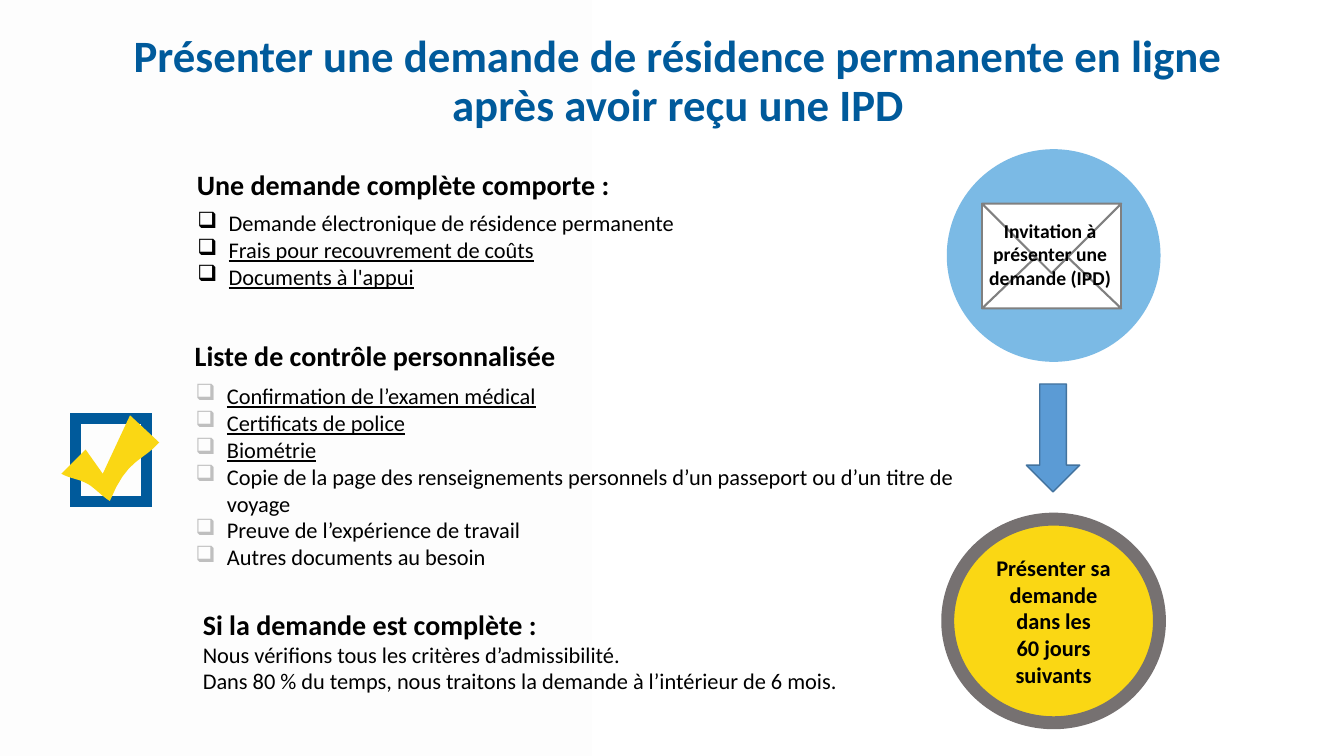
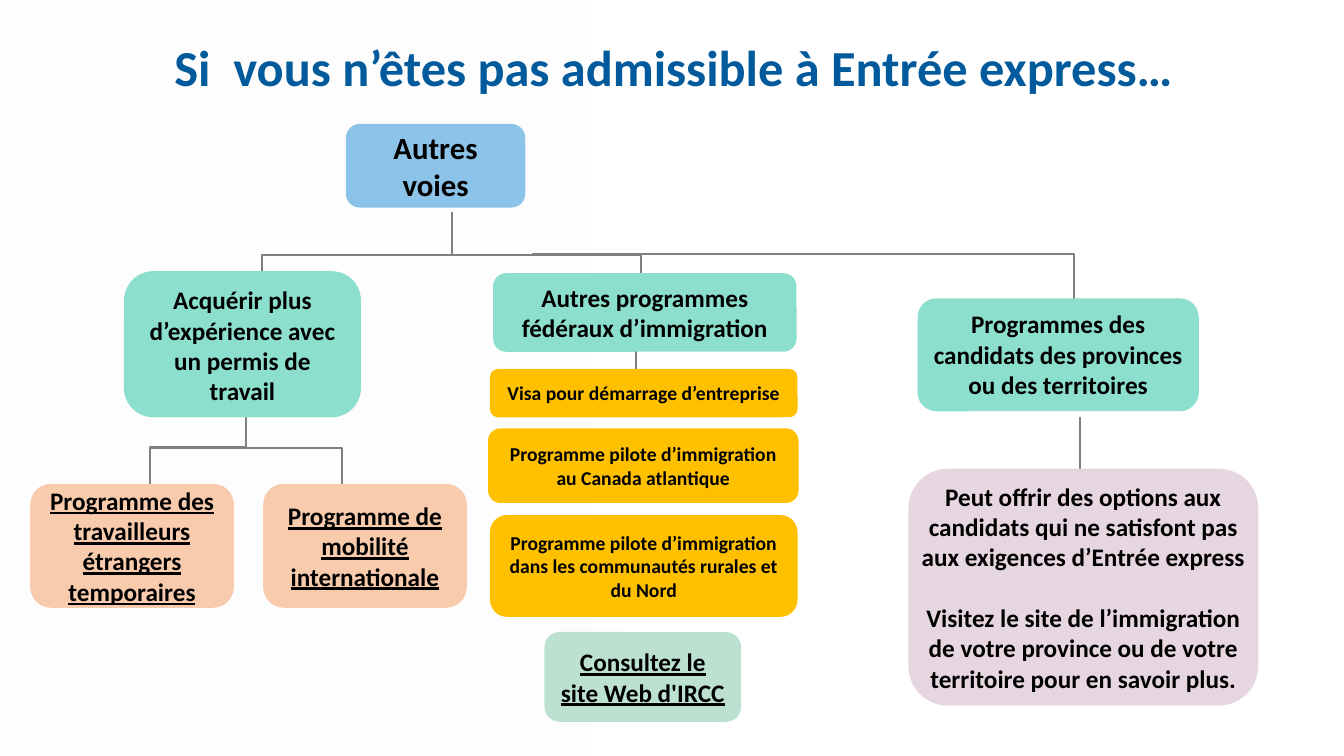
from lxml import etree
from pptx import Presentation
from pptx import util as u
from pptx.dml.color import RGBColor
from pptx.enum import shapes, text
from pptx.oxml.ns import qn

COLORS = {
    "band": "FDFDFD", "title": "005A9B", "ink": "000000", "white": "FFFFFF",
    "yellow": "FAD714", "ring": "767171", "sky": "7BBAE5", "rule": "808080",
    "arrow": "5B9BD5", "arrow_edge": "43739E", "bullet": "BFBFBF",
    "root": "8CC3E8", "branch": "8DDFCD", "permit": "F8CBAD",
    "pilot": "FFC000", "site": "BDE1D0", "province": "E6D6E0",
}
FONT = "Calibri"
NO_BREAK = chr(160)  # space that keeps a number with its unit
SHAPE = shapes.MSO_SHAPE
LEFT, CENTER = text.PP_ALIGN.LEFT, text.PP_ALIGN.CENTER
TOP, MIDDLE = text.MSO_ANCHOR.TOP, text.MSO_ANCHOR.MIDDLE
EVEN, NONE = (0.1, 0.1), (0, 0)


def rgb(name):
    return RGBColor.from_string(COLORS[name])


# Shared parts
def paint(shape, fill=None, line=None, weight=1.5):
    shape.shadow.inherit = False
    if fill:
        shape.fill.solid()
        shape.fill.fore_color.rgb = rgb(fill)
    else:
        shape.fill.background()
    if line:
        shape.line.color.rgb = rgb(line)
        shape.line.width = u.Pt(weight)
    else:
        shape.line.fill.background()
    return shape


def add_box(page, kind, area, fill=None, line=None, weight=1.5):
    shape = page.shapes.add_shape(kind, *map(u.Inches, area))
    return paint(shape, fill, line, weight)


def write(shape, lines, size, bold=True, align=CENTER, anchor=TOP,
          inset=(0.1, 0.05), color="ink", underlined=()):
    frame = shape.text_frame
    frame.word_wrap = True
    frame.vertical_anchor = anchor
    frame.margin_left = frame.margin_right = u.Inches(inset[0])
    frame.margin_top = frame.margin_bottom = u.Inches(inset[1])
    frame.text = "\n".join(lines)
    for index, para in enumerate(frame.paragraphs):
        para.alignment = align
        for span in para.runs:
            font = span.font
            font.name, font.size, font.bold = FONT, u.Pt(size), bold
            font.color.rgb = rgb(color)
            if index in underlined:
                font.underline = True
    return frame


def add_bullets(frame, color):
    for para in frame.paragraphs:
        props = para._p.get_or_add_pPr()
        props.set("marL", str(u.Inches(0.31)))
        props.set("indent", str(u.Inches(-0.31)))
        tint = etree.SubElement(props, qn("a:buClr"))
        etree.SubElement(tint, qn("a:srgbClr"), val=COLORS[color])
        etree.SubElement(props, qn("a:buChar"), char="❑")


def add_text(page, area, lines, size, **style):
    return write(page.shapes.add_textbox(*map(u.Inches, area)), lines, size, **style)


def new_page(deck, area, title, size, inset=(0.1, 0.05)):
    page = deck.slides.add_slide(deck.slide_layouts[6])
    add_box(page, SHAPE.RECTANGLE, (0, 0, 5.87, 7.5), "band")
    frame = add_text(page, area, [title], size, color="title", inset=inset)
    return page, frame


def add_line(page, start, end, kind=shapes.MSO_CONNECTOR.STRAIGHT):
    line = page.shapes.add_connector(kind, *map(u.Inches, (*start, *end)))
    line.line.color.rgb = rgb("rule")
    line.line.width = u.Pt(1.5)
    etree.SubElement(line._element.spPr, qn("a:effectLst"))
    return line


def add_drop(page, start, end):
    """Elbow that leaves downward, crosses over and arrives downward."""
    (x1, y1), (x2, y2) = start, end
    mid_x, mid_y = (x1 + x2) / 2, (y1 + y2) / 2
    half_x, half_y = (x2 - x1) / 2, (y2 - y1) / 2
    line = add_line(page, (mid_x - half_y, mid_y + half_x),
                    (mid_x + half_y, mid_y - half_x), shapes.MSO_CONNECTOR.ELBOW)
    line._element.spPr.find(qn("a:xfrm")).set("rot", str(90 * 60000))


def add_corner(page, start, end):
    """Elbow with a single turn: across, then down."""
    line = add_line(page, start, end, shapes.MSO_CONNECTOR.ELBOW)
    line._element.spPr.find(qn("a:prstGeom")).set("prst", "bentConnector2")


# Slide 1: application steps
def add_section(page, left, top, heading, width):
    box = add_box(page, SHAPE.ROUNDED_RECTANGLE, (left, top, width, 0.48))
    write(box, [heading], 20, align=LEFT)


def add_checklist(page, area, items, underlined, bullet, inset):
    box = add_box(page, SHAPE.ROUNDED_RECTANGLE, area)
    frame = write(box, items, 16, bold=False, align=LEFT, inset=inset,
                  underlined=underlined)
    add_bullets(frame, bullet)


def add_outcome(page, area, heading, lines):
    box = add_box(page, SHAPE.ROUNDED_RECTANGLE, area)
    frame = write(box, [heading, *lines], 16, bold=False, align=LEFT)
    font = frame.paragraphs[0].runs[0].font
    font.size, font.bold = u.Pt(20), True


def curve(points, steps=8):
    """Points along a cubic Bezier, without its first point."""
    result = []
    for step in range(1, steps + 1):
        t = step / steps
        weights = ((1 - t) ** 3, 3 * t * (1 - t) ** 2, 3 * t * t * (1 - t), t ** 3)
        result.append(tuple(sum(w * p[axis] for w, p in zip(weights, points))
                            for axis in (0, 1)))
    return result


def add_tick_box(page, left, top):
    frame = add_box(page, SHAPE.RECTANGLE, (left, top, 0.7, 0.83), None, "title", 7.75)
    # Square corners on the thick outline
    etree.SubElement(frame._element.spPr.find(qn("a:ln")), qn("a:miter"), lim="800000")
    tip, heel, bend, tail = (0.83, 0.24), (0.34, 0.82), (0.12, 0.65), (-0.14, 0.55)
    outline = [(0.54, -0.03), tip,
               *curve([tip, (0.66, 0.43), (0.51, 0.4), heel]),
               *curve([heel, (0.27, 0.78), (0.19, 0.69), bend]),
               *curve([bend, (0.03, 0.6), (-0.05, 0.6), tail]),
               (0.1, 0.31), (0.27, 0.55)]
    points = [(u.Inches(left + x), u.Inches(top + y)) for x, y in outline]
    builder = page.shapes.build_freeform(*points[0])
    builder.add_line_segments(points[1:], close=True)
    paint(builder.convert_to_shape(), "yellow")


def add_invitation(page, left, top):
    add_box(page, SHAPE.OVAL, (left, top, 2.12, 2.11), "sky")
    x, y, width = left + 0.35, top + 0.54, 1.38
    # Envelope: body, lower fold, flap
    for kind, offset, height, turn in (
            (SHAPE.RECTANGLE, 0, 1.04, 0),
            (SHAPE.ISOSCELES_TRIANGLE, 0.38, 0.66, 0),
            (SHAPE.ISOSCELES_TRIANGLE, 0, 0.69, 180)):
        part = add_box(page, kind, (x, y + offset, width, height), "white", "rule")
        part.rotation = turn
    add_text(page, (left + 0.25, top + 0.64, 1.55, 0.81),
             ["Invitation à présenter une demande (IPD)"], 14)


def add_timeline(page, left, top):
    add_invitation(page, left, top)
    add_box(page, SHAPE.DOWN_ARROW, (left + 0.79, top + 2.33, 0.53, 1.07),
            "arrow", "arrow_edge", 1)
    goal = add_box(page, SHAPE.OVAL, (left + 0.01, top + 3.67, 2.1, 2.02),
                   "yellow", "ring", 9.25)
    write(goal, [f"Présenter sa demande dans les 60{NO_BREAK}jours suivants"], 16,
          anchor=MIDDLE)


def build_application(deck):
    page, title = new_page(
        deck, (1.08, 0.34, 11.29, 0.97),
        "Présenter une demande de résidence permanente en ligne après avoir reçu une IPD",
        32, NONE)
    title.paragraphs[0].line_spacing = 0.9
    add_section(page, 1.83, 1.59, "Une demande complète comporte :", 5.09)
    add_checklist(page, (1.81, 1.98, 6.93, 1.01), [
        "Demande électronique de résidence permanente",
        "Frais pour recouvrement de coûts",
        "Documents à l'appui"], (1, 2), "ink", (0.1, 0.05))
    add_section(page, 1.81, 3.29, "Liste de contrôle personnalisée", 4.58)
    add_checklist(page, (1.74, 3.69, 8.01, 2.09), [
        "Confirmation de l’examen médical",
        "Certificats de police",
        "Biométrie",
        "Copie de la page des renseignements personnels d’un passeport ou d’un titre de voyage",
        "Preuve de l’expérience de travail",
        "Autres documents au besoin"], (0, 1, 2), "bullet", (0.1, 0))
    add_tick_box(page, 0.75, 4.15)
    add_outcome(page, (1.83, 5.89, 7.17, 1.71), "Si la demande est complète :", [
        "Nous vérifions tous les critères d’admissibilité.",
        f"Dans 80{NO_BREAK}% du temps, nous traitons la demande à l’intérieur de 6 mois."])
    add_timeline(page, 9.39, 1.48)


# Slide 2: tree of other pathways
def add_node(page, area, fill, lines, size=18, **style):
    box = add_box(page, SHAPE.ROUNDED_RECTANGLE, area, fill)
    return box, write(box, lines, size, **style)


def add_permit_branch(page, left, top):
    fork = (left + 1.21, top + 1.39)
    for x in (0.26, 2.16):
        add_drop(page, fork, (left + x, top + 2.11))
    head, _ = add_node(page, (left, top, 2.35, 1.45), "branch",
                       ["Acquérir plus d’expérience avec un permis de travail"])
    head.adjustments[0] = 0.2
    for x, label, inset in (
            (-0.93, "Programme des travailleurs étrangers temporaires", NONE),
            (1.38, "Programme de mobilité internationale", EVEN)):
        add_node(page, (left + x, top + 2.11, 2.02, 1.23), "permit", [label],
                 anchor=MIDDLE, inset=inset, underlined=(0,))


def add_federal_branch(page, left, top):
    add_line(page, (left + 1.42, top + 0.7), (left + 1.42, top + 0.99))
    add_node(page, (left, top, 3.01, 0.78), "branch",
             ["Autres programmes fédéraux d’immigration"])
    for x, y, width, height, label in (
            (-0.03, 0.95, 3.05, 0.48, "Visa pour démarrage d’entreprise"),
            (-0.05, 1.54, 3.08, 0.74,
             "Programme pilote d’immigration au Canada atlantique"),
            (-0.03, 2.4, 3.05, 1.01,
             "Programme pilote d’immigration dans les communautés rurales et du Nord")):
        add_node(page, (left + x, top + y, width, height), "pilot", [label], 14,
                 anchor=MIDDLE, inset=EVEN)
    add_node(page, (left + 0.51, top + 3.56, 1.95, 0.89), "site",
             ["Consultez le site Web d'IRCC"], anchor=MIDDLE, inset=EVEN,
             underlined=(0,))


def add_province_branch(page, left, top):
    add_node(page, (left, top, 2.79, 1.12), "branch",
             ["Programmes des candidats des provinces ou des territoires"])
    add_line(page, (left + 1.61, top + 1.18), (left + 1.61, top + 1.69))
    _, frame = add_node(page, (left - 0.09, top + 1.69, 3.47, 2.35), "province", [
        "Peut offrir des options aux candidats qui ne satisfont pas aux exigences d’Entrée express",
        "Visitez le site de l’immigration de votre province ou de votre territoire pour en savoir plus."],
        anchor=MIDDLE, inset=NONE)
    frame.paragraphs[1].space_before = u.Pt(22)


def build_pathways(deck):
    page, _ = new_page(deck, (0, 0.31, 13.37, 0.71),
                       "Si  vous n’êtes pas admissible à Entrée express…", 36)
    # Links from the root to the three branches
    for x in (2.6, 6.36):
        add_drop(page, (4.48, 2.1), (x, 2.96))
    add_corner(page, (5.28, 2.52), (10.65, 2.98))
    add_node(page, (3.43, 1.23, 1.78, 0.83), "root", ["Autres voies"], 22,
             anchor=MIDDLE)
    add_permit_branch(page, 1.23, 2.69)
    add_federal_branch(page, 4.89, 2.71)
    add_province_branch(page, 9.1, 2.96)


def main():
    deck = Presentation()
    deck.slide_width, deck.slide_height = u.Inches(13.33), u.Inches(7.5)
    build_application(deck)
    build_pathways(deck)
    deck.save("out.pptx")


if __name__ == "__main__":
    main()
